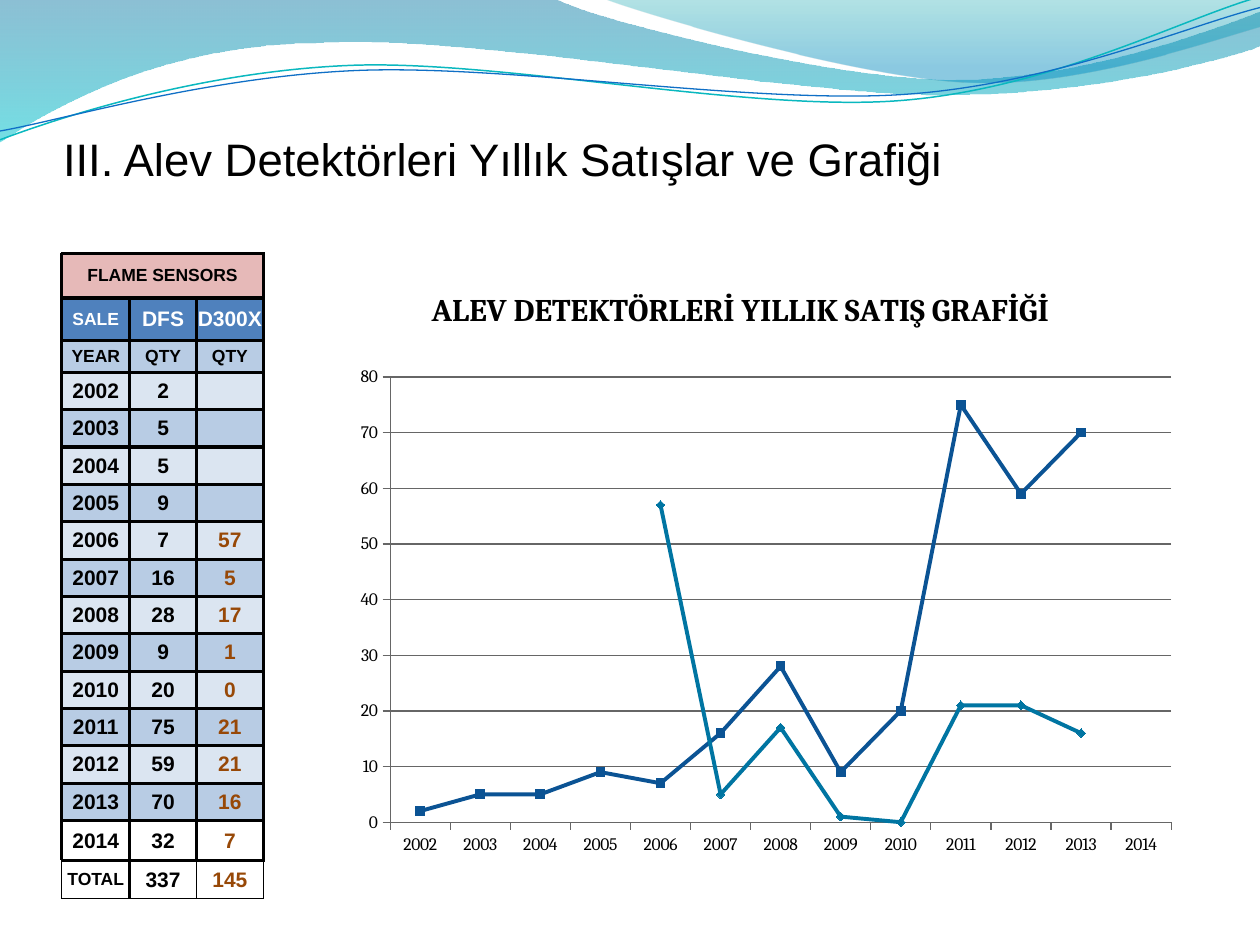
from lxml import etree
from pptx import Presentation, util as u
from pptx.chart.data import CategoryChartData
from pptx.dml.color import RGBColor
from pptx.enum import chart as ch, text
from pptx.oxml.ns import qn

W, H = 10, 7.5
UNITS = 1000  # outline units to the inch
BLACK, BROWN, WHITE = "000000", "974807", "FFFFFF"
PALE, MID, HEAD, PINK = "DBE5F1", "B8CCE4", "4F81BD", "E6B9B8"
YEARS = [str(y) for y in range(2002, 2015)]
FIRST = [2, 5, 5, 9, 7, 16, 28, 9, 20, 75, 59, 70, 32]
SECOND = [None] * 4 + [57, 5, 17, 1, 0, 21, 21, 16, 7]


def rgb(value):
    return RGBColor.from_string(value)


def inches(box):
    """Turn shares of the slide into lengths."""
    return [u.Inches(share * size) for share, size in zip(box, (W, H, W, H))]


def style(font, size, color=BLACK, bold=False, name="Arial"):
    font.size, font.bold, font.name = u.Pt(size), bold, name
    font.color.rgb = rgb(color)


# Waves at the top: each is a start point followed by curves (6 numbers) and lines (2)
def bend(sp, segments, left, top):
    """Turn the straight pieces of an outline into curves where a segment has handles."""
    pieces = list(sp._element.spPr.iter(qn("a:lnTo")))
    for piece, seg in zip(pieces, segments):
        if len(seg) == 6:
            piece.tag = qn("a:cubicBezTo")
            for i in (0, 2):
                x, y = round((seg[i] - left) * UNITS), round((seg[i + 1] - top) * UNITS)
                piece.insert(i // 2, etree.Element(qn("a:pt"), x=str(x), y=str(y)))


def add_wave(s, start, segments, stops=None, line=None):
    ends = [start] + [seg[-2:] for seg in segments]
    points = [(round(x * UNITS), round(y * UNITS)) for x, y in ends]
    builder = s.shapes.build_freeform(*points[0], scale=u.Inches(1) / UNITS)
    builder.add_line_segments(points[1:], close=bool(stops))
    sp = builder.convert_to_shape()
    bend(sp, segments, min(x for x, _ in ends), min(y for _, y in ends))
    sp.shadow.inherit = False
    if line:
        sp.fill.background()
        sp.line.color.rgb, sp.line.width = rgb(line[0]), u.Pt(line[1])
        return
    sp.line.fill.background()
    sp.fill.gradient()
    sp.fill.gradient_angle = 270
    for stop, (position, color, _) in zip(sp.fill.gradient_stops, stops):
        stop.position, stop.color.rgb = position, rgb(color)
    for clr, (_, _, opacity) in zip(sp._element.spPr.iter(qn("a:srgbClr")), stops):
        etree.SubElement(clr, qn("a:alpha"), val=str(opacity * 1000))


def add_waves(s):
    add_wave(s, (0, -.01),
             [(4.4, -.01), (4.76, .17, 6.64, .63, 7.58, .63),
              (8.53, .63, 9.58, .26, 10, .09), (10.01, .36),
              (9.83, .44, 8.7, .76, 7.46, .75), (6.22, .75, 3.82, .28, 2.57, .34),
              (1.29, .35, .46, .83, -.01, 1.13)],
             stops=[(0, "0074A1", 45), (1, "00C6CF", 55)])
    add_wave(s, (4.79, -.01),
             [(5.09, .11, 6.82, .62, 7.69, .65), (8.56, .69, 9.61, .32, 10, .21), (10, 0)],
             stops=[(0, "00A1A9", 30), (.8, "008BBF", 45)])
    add_wave(s, (0, 1.11),
             [(.48, .93, 1.58, .57, 2.77, .52), (3.95, .47, 5.93, .89, 7.13, .8),
              (8.33, .71, 9.38, .15, 9.98, -.02)], line=("0AB8BF", .85))
    add_wave(s, (0, 1.04),
             [(.47, .96, 1.64, .61, 2.83, .56), (4.03, .51, 5.97, .83, 7.17, .75),
              (8.36, .67, 9.41, .21, 10, .06)], line=("0F6FC6", .75))


def add_title(s, box):
    sp = s.shapes.title
    s.shapes._spTree.append(sp._element)  # in front of the waves
    sp.left, sp.top, sp.width, sp.height = inches(box)
    tf = sp.text_frame
    tf.text = "III. Alev Detektörleri Yıllık Satışlar ve Grafiği"
    tf.vertical_anchor = text.MSO_ANCHOR.BOTTOM
    tf.margin_left = tf.margin_right = tf.margin_bottom = 0
    p = tf.paragraphs[0]
    p.alignment = text.PP_ALIGN.LEFT
    style(p.runs[0].font, 26)


# Sales table
def set_borders(cell, **widths):
    tc_pr = cell._tc.get_or_add_tcPr()
    for i, side in enumerate(side for side in "LRTB" if side in widths):
        ln = etree.Element(qn("a:ln" + side), w=str(u.Pt(widths[side])))
        fill = etree.SubElement(ln, qn("a:solidFill"))
        etree.SubElement(fill, qn("a:srgbClr"), val=BLACK)
        tc_pr.insert(i, ln)


def fill_cell(cell, value="", size=12, color=BLACK, fill=None):
    cell.margin_left = cell.margin_right = cell.margin_top = cell.margin_bottom = 0
    cell.vertical_anchor = text.MSO_ANCHOR.MIDDLE
    if fill:
        cell.fill.solid()
        cell.fill.fore_color.rgb = rgb(fill)
    else:
        cell.fill.background()
    p = cell.text_frame.paragraphs[0]
    p.alignment = text.PP_ALIGN.CENTER
    if value:
        p.text = value
        style(p.runs[0].font, size, color, bold=True)
    else:
        etree.SubElement(p._p, qn("a:endParaRPr"), sz="1000")


def add_sales_table(s, box):
    # Each row: texts, sizes, text colours, fill
    plain, sales = [BLACK] * 3, [BLACK, BLACK, BROWN]
    rows = [(["FLAME SENSORS", "", ""], [10] * 3, plain, PINK),
            (["SALE", "DFS", "D300X"], [10, 12, 12], [WHITE] * 3, HEAD),
            (["YEAR", "QTY", "QTY"], [10] * 3, plain, MID)]
    for i, (year, *counts) in enumerate(zip(YEARS, FIRST, SECOND)):
        values = [year] + ["" if n is None else str(n) for n in counts]
        rows.append((values, [12] * 3, sales, None if year == "2014" else (PALE, MID)[i % 2]))
    rows.append((["TOTAL", "337", "145"], [10, 12, 12], sales, None))

    table = s.shapes.add_table(len(rows) + 1, 4, *inches(box)).table
    table.first_row = table.horz_banding = False
    for column, width in zip(table.columns, (.22, .54, .53, .53)):
        column.width = u.Inches(width)
    head, foot = [.23, .35, .34, .25], [.32, .3]
    year_height = (box[3] * H - sum(head + foot)) / 12
    for row, height in zip(table.rows, head + [year_height] * 12 + foot):
        row.height = u.Inches(height)

    for c in range(4):
        fill_cell(table.cell(0, c))
    for r, (values, sizes, colors, fill) in enumerate(rows, 1):
        fill_cell(table.cell(r, 0))
        for c, (value, size, color) in enumerate(zip(values, sizes, colors), 1):
            cell = table.cell(r, c)
            fill_cell(cell, value, size, color, fill)
            if r == len(rows):
                set_borders(cell, L=2 if c == 2 else 1, R=2 if c == 1 else 1, T=2, B=1)
            else:
                set_borders(cell, L=2, R=2, T=2, B=2)
    table.cell(1, 1).merge(table.cell(1, 3))


# Line chart of yearly sales
def add_sales_chart(s, box):
    data = CategoryChartData()
    data.categories = YEARS
    for name, values in (("Series 1", FIRST), ("Series 2", SECOND)):
        data.add_series(name, values[:-1] + [None])
    chart = s.shapes.add_chart(ch.XL_CHART_TYPE.LINE_MARKERS, *inches(box), data).chart
    chart.has_legend = False
    style(chart.font, 10, name="Cambria")
    chart.has_title = True
    tf = chart.chart_title.text_frame
    tf.text = "ALEV DETEKTÖRLERİ YILLIK SATIŞ GRAFİĞİ "
    style(tf.paragraphs[0].runs[0].font, 18, bold=True, name="Cambria")

    axes = chart.category_axis, chart.value_axis
    for axis in axes:
        axis.major_tick_mark = ch.XL_TICK_MARK.OUTSIDE
    chart.value_axis.minimum_scale, chart.value_axis.maximum_scale = 0, 80
    chart.value_axis.major_unit = 10
    for line in [axis.format.line for axis in axes] + [chart.value_axis.major_gridlines.format.line]:
        line.color.rgb, line.width = rgb("666666"), u.Pt(.75)

    looks = (("0B5394", ch.XL_MARKER_STYLE.SQUARE), ("0075A2", ch.XL_MARKER_STYLE.DIAMOND))
    for series, (color, marker) in zip(chart.plots[0].series, looks):
        series.smooth = False
        series.format.line.color.rgb, series.format.line.width = rgb(color), u.Pt(2.25)
        series.marker.style, series.marker.size = marker, 5
        series.marker.format.fill.solid()
        series.marker.format.fill.fore_color.rgb = rgb(color)
        series.marker.format.line.color.rgb = rgb(color)

    area = chart._chartSpace.chart.plotArea
    for old in area.findall(qn("c:layout")):
        area.remove(old)
    layout = etree.Element(qn("c:layout"))
    area.insert(0, layout)
    manual = etree.SubElement(layout, qn("c:manualLayout"))
    for tag, value in (("layoutTarget", "inner"), ("xMode", "edge"), ("yMode", "edge"),
                       ("x", .09), ("y", .183), ("w", .905), ("h", .725)):
        etree.SubElement(manual, qn("c:" + tag), val=str(value))


def main():
    prs = Presentation()
    prs.slide_width, prs.slide_height = u.Inches(W), u.Inches(H)
    s = prs.slides.add_slide(prs.slide_layouts[5])
    add_waves(s)
    add_title(s, (.05, .103, .9, .093))
    add_sales_table(s, (.027, .238, .181, .713))
    add_sales_chart(s, (.248, .28, .685, .65))
    prs.save("out.pptx")


if __name__ == "__main__":
    main()
